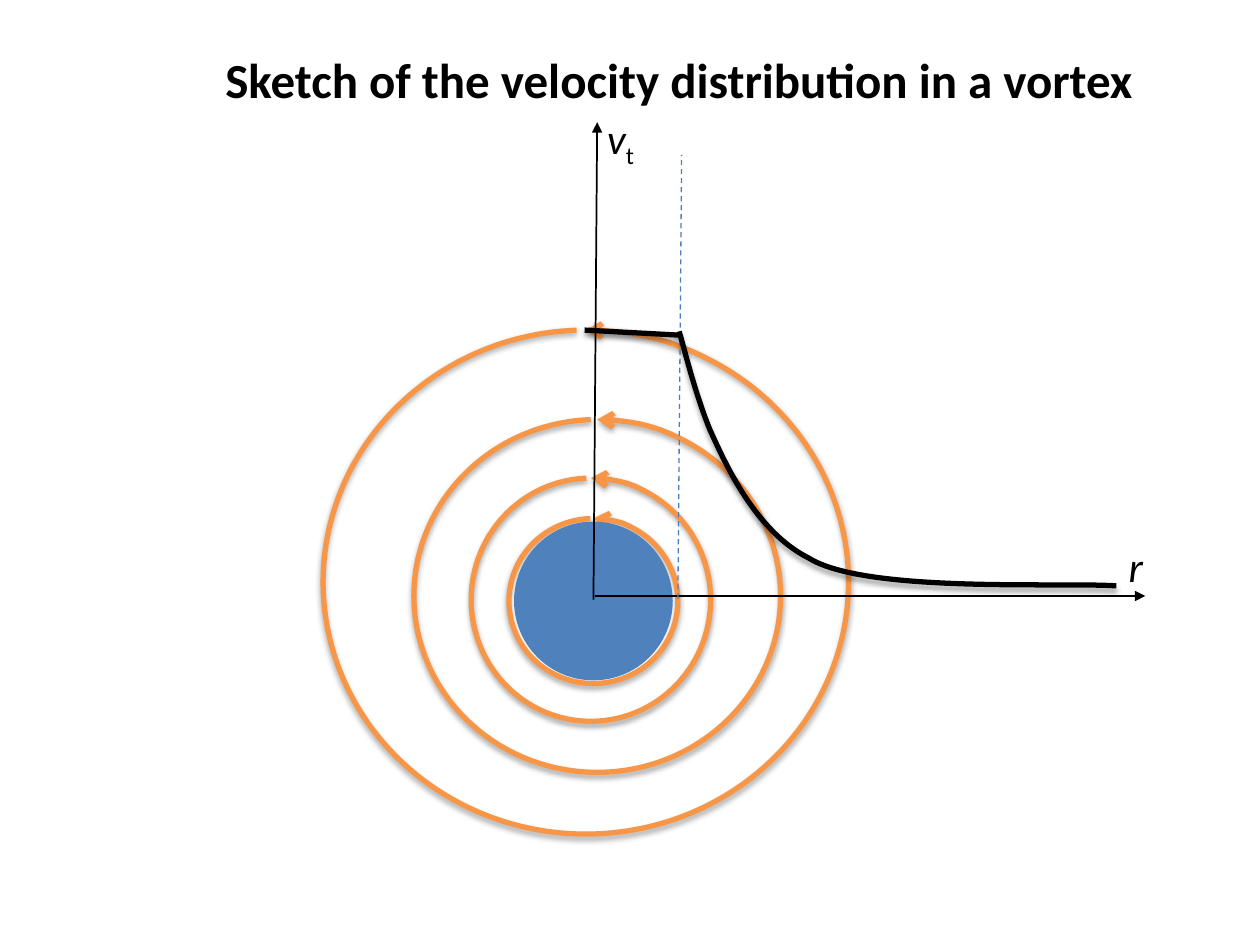
from lxml import etree
from pptx import Presentation
from pptx.dml.color import RGBColor
from pptx.enum.dml import MSO_LINE
from pptx.enum.shapes import MSO_CONNECTOR, MSO_SHAPE
from pptx.enum.text import MSO_AUTO_SIZE
from pptx.oxml.ns import qn
from pptx.util import Inches, Pt

BLACK = RGBColor(0x00, 0x00, 0x00)
ORANGE = RGBColor(0xF7, 0x96, 0x46)
BLUE = RGBColor(0x4F, 0x81, 0xBD)
DASH_BLUE = RGBColor(0x4B, 0x7E, 0xBC)
ARC, OVAL = MSO_SHAPE.ARC, MSO_SHAPE.OVAL
STRAIGHT = MSO_CONNECTOR.STRAIGHT
DASH = MSO_LINE.DASH
GROW = MSO_AUTO_SIZE.SHAPE_TO_FIT_TEXT
FONT = "Calibri"


def set_effects(shape, shadow):
    """Give the shape a soft drop shadow, or none at all."""
    effects = etree.SubElement(shape._element.spPr, qn("a:effectLst"))
    if shadow:
        outer = etree.SubElement(effects, qn("a:outerShdw"), blurRad=str(Pt(3.15)),
                                 dist=str(Pt(1.81)), dir="5400000", rotWithShape="0")
        tint = etree.SubElement(outer, qn("a:srgbClr"), val=str(BLACK))
        etree.SubElement(tint, qn("a:alpha"), val="35000")


def style_line(shape, color, width, shadow=False, dash=None, head=None, tail=None):
    """Set the stroke, the arrowheads and the shadow of a shape or connector."""
    shape.line.color.rgb = color
    shape.line.width = Pt(width)
    if dash:
        shape.line.dash_style = dash
    for tag, kind in (("a:headEnd", head), ("a:tailEnd", tail)):
        if kind:
            etree.SubElement(shape.get_or_add_ln(), qn(tag), type=kind)
    set_effects(shape, shadow)


def add_text(shapes, left, top, width, height, runs, size):
    """Add one paragraph of (text, font settings, baseline) runs."""
    box = shapes.add_textbox(Inches(left), Inches(top), Inches(width), Inches(height))
    box.text_frame.word_wrap = True
    box.text_frame.auto_size = GROW
    para = box.text_frame.paragraphs[0]
    for text, bold, italic, baseline in runs:
        span = para.add_run()
        span.text = text
        span.font.name = FONT
        span.font.size = Pt(size)
        span.font.bold = bold
        span.font.italic = italic
        span.font.color.rgb = BLACK
        if baseline:
            span._r.get_or_add_rPr().set("baseline", str(baseline))


def add_round(shapes, kind, center_x, center_y, width, height):
    """Add a round shape about its centre."""
    return shapes.add_shape(kind, Inches(center_x - width / 2), Inches(center_y - height / 2),
                            Inches(width), Inches(height))


def add_vortex(shapes, x, y):
    """Draw the solid core and the streamlines around the point x, y."""
    streamlines = [(0, 0, 1.34, 1.31), (-0.02, -0.01, 1.9, 1.93),
                   (0.03, -0.04, 2.91, 2.8), (-0.06, -0.15, 4.17, 4)]
    for index, (shift_x, shift_y, width, height) in enumerate(streamlines):
        arc = add_round(shapes, ARC, x + shift_x, y + shift_y, width, height)
        arc.adjustments[0] = 162
        arc.adjustments[1] = 160.74
        arc.fill.background()
        style_line(arc, ORANGE, 3, shadow=True, head="arrow")
        if index == 0:
            core = add_round(shapes, OVAL, x, y, 1.26, 1.26)
            core.fill.solid()
            core.fill.fore_color.rgb = BLUE
            core.line.fill.background()
            core.shadow.inherit = False


def add_line(shapes, x, y, start, end, **style):
    """Connect two points given relative to x, y."""
    line = shapes.add_connector(STRAIGHT, Inches(x + start[0]), Inches(y + start[1]),
                                Inches(x + end[0]), Inches(y + end[1]))
    style_line(line, **style)


def add_curve(shapes, x, y, points):
    """Draw cubic curves: a start point, then three points for each curve."""
    places = [(Inches(x + dx), Inches(y + dy)) for dx, dy in points]
    builder = shapes.build_freeform(*places[0], scale=1.0)
    builder.add_line_segments(places[1:], close=False)
    curve = builder.convert_to_shape()
    segments = list(curve._element.iter(qn("a:lnTo")))
    for first in range(0, len(segments), 3):
        bezier = etree.Element(qn("a:cubicBezTo"))
        segments[first].addprevious(bezier)
        for segment in segments[first:first + 3]:
            bezier.append(segment[0])
            segment.getparent().remove(segment)
    curve.fill.background()
    style_line(curve, BLACK, 3, shadow=True)


def add_velocity_plot(shapes, x, y):
    """Draw the axes and the velocity profile from the origin x, y."""
    axis = {"color": BLACK, "width": 1, "tail": "triangle"}
    add_line(shapes, x, y, (0, 0), (0.03, -3.79), **axis)
    add_line(shapes, x, y, (0.01, -0.03), (4.38, -0.03), **axis)
    add_text(shapes, x + 4.15, y - 0.52, 0.47, 0.5, [("r", False, True, 0)], 24)
    add_text(shapes, x + 0.01, y - 3.92, 0.62, 0.5,
             [("v", False, True, 0), ("t", False, False, -25000)], 24)
    add_line(shapes, x, y, (-0.07, -2.14), (0.68, -2.1), color=BLACK, width=3, shadow=True)
    add_line(shapes, x, y, (0.67, -0.01), (0.7, -3.53), color=DASH_BLUE, width=0.75, dash=DASH)
    add_curve(shapes, x, y, [(0.68, -2.13),
                             (0.72, -2), (0.8, -1.66), (0.92, -1.36),
                             (1.05, -1.07), (1.29, -0.54), (1.71, -0.33),
                             (2.16, -0.05), (3.7, -0.14), (4.15, -0.11)])


def main():
    """Build the slide and save it."""
    deck = Presentation()
    deck.slide_width, deck.slide_height = Inches(10), Inches(7.5)
    page = deck.slides.add_slide(deck.slide_layouts[6])
    sketch = page.shapes.add_group_shape()
    add_vortex(sketch.shapes, 4.71, 4.77)
    add_velocity_plot(sketch.shapes, 4.71, 4.76)
    add_text(page.shapes, 1.69, 0.34, 7.95, 0.57,
             [("Sketch of the velocity distribution in a vortex", True, False, 0)], 28)
    deck.save("out.pptx")


if __name__ == "__main__":
    main()
